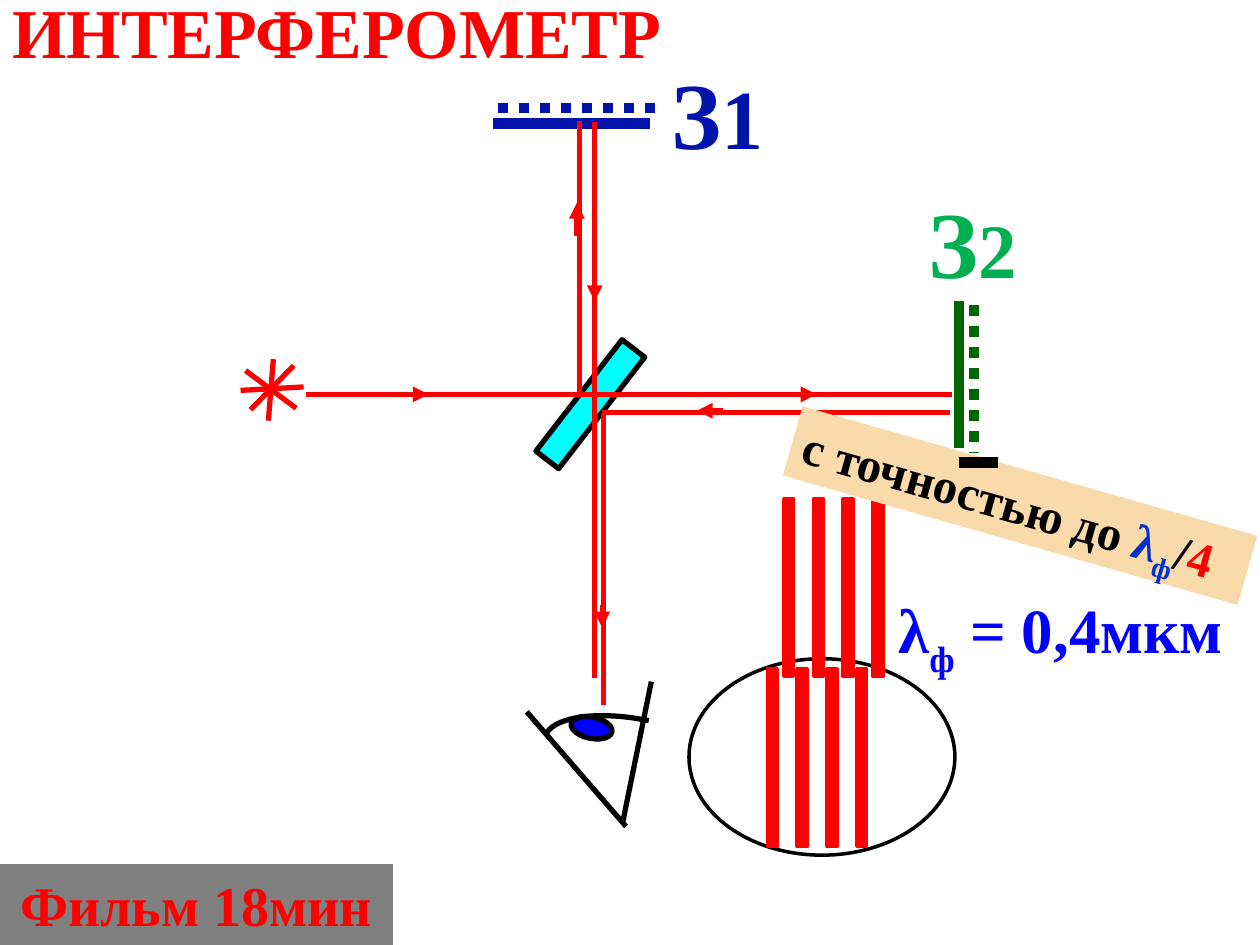
from lxml import etree
from pptx import Presentation
from pptx.dml.color import RGBColor
from pptx.enum.dml import MSO_LINE
from pptx.enum.shapes import MSO_CONNECTOR, MSO_SHAPE
from pptx.enum.text import MSO_ANCHOR, MSO_AUTO_SIZE, PP_ALIGN
from pptx.oxml.ns import qn
from pptx.util import Cm, Pt

STRAIGHT = MSO_CONNECTOR.STRAIGHT
RECTANGLE, OVAL = MSO_SHAPE.RECTANGLE, MSO_SHAPE.OVAL
DOTTED = MSO_LINE.ROUND_DOT
TOP, MIDDLE = MSO_ANCHOR.TOP, MSO_ANCHOR.MIDDLE
LEFT, CENTER = PP_ALIGN.LEFT, PP_ALIGN.CENTER
GROW = MSO_AUTO_SIZE.SHAPE_TO_FIT_TEXT

RED = RGBColor(0xFF, 0x00, 0x00)
BLACK = RGBColor(0x00, 0x00, 0x00)
WHITE = RGBColor(0xFF, 0xFF, 0xFF)
CYAN = RGBColor(0x00, 0xFF, 0xFF)
BLUE = RGBColor(0x00, 0x00, 0xFF)
NAVY = RGBColor(0x00, 0x14, 0xAC)
LAMBDA_BLUE = RGBColor(0x00, 0x33, 0xCC)
DARK_GREEN = RGBColor(0x00, 0x66, 0x00)
GREEN = RGBColor(0x00, 0xB0, 0x50)
SAND = RGBColor(0xF9, 0xDA, 0xAB)
GRAY = RGBColor(0x80, 0x80, 0x80)


class Drawing:
    """Holds the text style and the current slide."""

    font_format = {"name": "Times New Roman", "bold": True}

    def __init__(self, slide):
        self.slide = slide

    def line(self, start, end, color=RED, width=3, dash=None, arrow=False):
        connector = self.slide.shapes.add_connector(
            STRAIGHT, *(Cm(value) for value in (*start, *end)))
        connector.line.color.rgb = color
        connector.line.width = Pt(width)
        if dash:
            connector.line.dash_style = dash
        if arrow:
            line_element = connector.line._get_or_add_ln()
            etree.SubElement(line_element, qn("a:tailEnd"), type="triangle")
        etree.SubElement(connector._element.spPr, qn("a:effectLst"))

    def shape(self, kind, box, fill, outline=None, width=3, rotation=0):
        shape = self.slide.shapes.add_shape(kind, *(Cm(value) for value in box))
        shape.shadow.inherit = False
        shape.rotation = rotation
        shape.fill.solid()
        shape.fill.fore_color.rgb = fill
        if outline is None:
            shape.line.fill.background()
        else:
            shape.line.color.rgb = outline
            shape.line.width = Pt(width)
        return shape

    def curve(self, points, color=BLACK, width=3, steps=24):
        """Draws a cubic Bezier curve through short segments."""
        vertices = []
        for step in range(steps + 1):
            t = step / steps
            weights = ((1 - t) ** 3, 3 * t * (1 - t) ** 2, 3 * t * t * (1 - t), t ** 3)
            vertices.append(tuple(
                Cm(sum(weight * value for weight, value in zip(weights, axis)))
                for axis in zip(*points)))
        builder = self.slide.shapes.build_freeform(*vertices[0])
        builder.add_line_segments(vertices[1:], close=False)
        shape = builder.convert_to_shape()
        shape.shadow.inherit = False
        shape.fill.background()
        shape.line.color.rgb = color
        shape.line.width = Pt(width)

    def text_box(self, box, runs, **frame_format):
        shape = self.slide.shapes.add_textbox(*(Cm(value) for value in box))
        self.fill_text(shape, runs, **frame_format)

    def fill_text(self, shape, runs, anchor=TOP, wrap=True, align=LEFT):
        """Adds runs given as (text, size, color) or (text, size, color, baseline)."""
        frame_format = {"word_wrap": wrap, "auto_size": GROW, "vertical_anchor": anchor}
        for name, value in frame_format.items():
            setattr(shape.text_frame, name, value)
        paragraph = shape.text_frame.paragraphs[0]
        paragraph.alignment = align
        for text, size, color, *baseline in runs:
            run = paragraph.add_run()
            run.text = text
            for name, value in {**self.font_format, "size": Pt(size)}.items():
                setattr(run.font, name, value)
            run.font.color.rgb = color
            if baseline:
                run._r.get_or_add_rPr().set("baseline", str(baseline[0] * 1000))

    def fringes(self, left, top, count=4, pitch=0.6):
        for index in range(count):
            self.shape(RECTANGLE, (left + index * pitch, top, 0.2, 3.58), RED, RED, 2)


def main():
    presentation = Presentation()
    presentation.slide_width = Cm(25.4)
    presentation.slide_height = Cm(19.05)
    drawing = Drawing(presentation.slides.add_slide(presentation.slide_layouts[6]))

    # Beam splitter and title
    drawing.shape(RECTANGLE, (11.61, 6.73, 0.58, 2.84), CYAN, BLACK, rotation=37.7)
    drawing.text_box((0, -0.36, 14.88, 1.96), [("ИНТЕРФЕРОМЕТР", 40, RED)], anchor=MIDDLE)

    # Light source
    for start, end in (((5.41, 8.48), (5.51, 7.24)), ((4.85, 7.87), (6.12, 7.8)),
                       ((5.05, 8.26), (5.92, 7.37)), ((5.97, 8.23), (4.95, 7.47))):
        drawing.line(start, end)

    # Mirrors, each with its shifted position
    drawing.line((19.33, 6.07), (19.33, 9.04), DARK_GREEN, 6)
    drawing.line((19.63, 6.15), (19.63, 9.14), DARK_GREEN, 6, DOTTED)
    drawing.line((9.93, 2.49), (13.11, 2.49), NAVY, 6)
    drawing.line((10.03, 2.18), (13.21, 2.18), NAVY, 6, DOTTED)

    # Beams
    for start, end in (((6.17, 7.95), (19.2, 7.95)), ((19.15, 8.31), (12.14, 8.31)),
                       ((11.68, 2.44), (11.68, 7.92)), ((11.99, 2.46), (11.99, 13.67)),
                       ((12.17, 8.33), (12.17, 14.22))):
        drawing.line(start, end)

    # Beam directions
    for start, end in (((8.1, 7.95), (8.64, 7.95)), ((15.93, 7.95), (16.46, 7.95)),
                       ((14.58, 8.28), (14.05, 8.28)), ((11.63, 4.75), (11.63, 4.09)),
                       ((11.99, 5.46), (11.99, 6.07)), ((12.14, 12.19), (12.14, 12.65))):
        drawing.line(start, end, arrow=True)

    # Eye
    drawing.line((12.55, 16.59), (13.13, 13.74), BLACK)
    drawing.line((12.62, 16.66), (10.62, 14.35), BLACK)
    drawing.curve(((11.02, 14.78), (11.23, 14.43), (12.12, 14.33), (13.08, 14.53)))
    drawing.shape(OVAL, (11.71, 14.25, 0.43, 0.84), BLUE, BLACK, rotation=101.7)

    # Mirror names
    drawing.text_box((13.28, 0.99, 2.39, 2.57), [("З", 54, NAVY), ("1", 48, NAVY)], wrap=False)
    drawing.text_box((18.47, 3.58, 2.39, 2.57), [("З", 54, GREEN), ("2", 44, GREEN)], wrap=False)

    # Field of view with interference fringes
    drawing.shape(OVAL, (13.89, 13.28, 5.36, 3.96), WHITE, BLACK, 2)
    drawing.fringes(15.47, 13.49)
    drawing.fringes(15.8, 10.06)

    # Accuracy label and mirror shift
    accuracy = drawing.shape(RECTANGLE, (15.8, 9.47, 9.53, 1.45), SAND, rotation=15.9)
    drawing.fill_text(accuracy, [("с точностью до ", 28, BLACK), ("λ", 28, LAMBDA_BLUE),
                                 ("ф", 28, LAMBDA_BLUE, -25), ("/", 28, BLACK),
                                 ("4", 28, RED)], wrap=False)
    drawing.line((19.33, 9.32), (20.12, 9.32), BLACK, 6)

    # Wavelength and film note
    drawing.text_box((17.86, 11.91, 7.54, 1.8),
                     [("λ", 36, BLUE), ("ф", 36, BLUE, -30), (" = 0,4мкм", 36, BLUE)],
                     anchor=MIDDLE)
    film = drawing.shape(RECTANGLE, (0, 17.42, 7.92, 1.63), GRAY)
    drawing.fill_text(film, [("Фильм 18мин", 32, RED)], align=CENTER)

    presentation.save("out.pptx")


if __name__ == "__main__":
    main()
